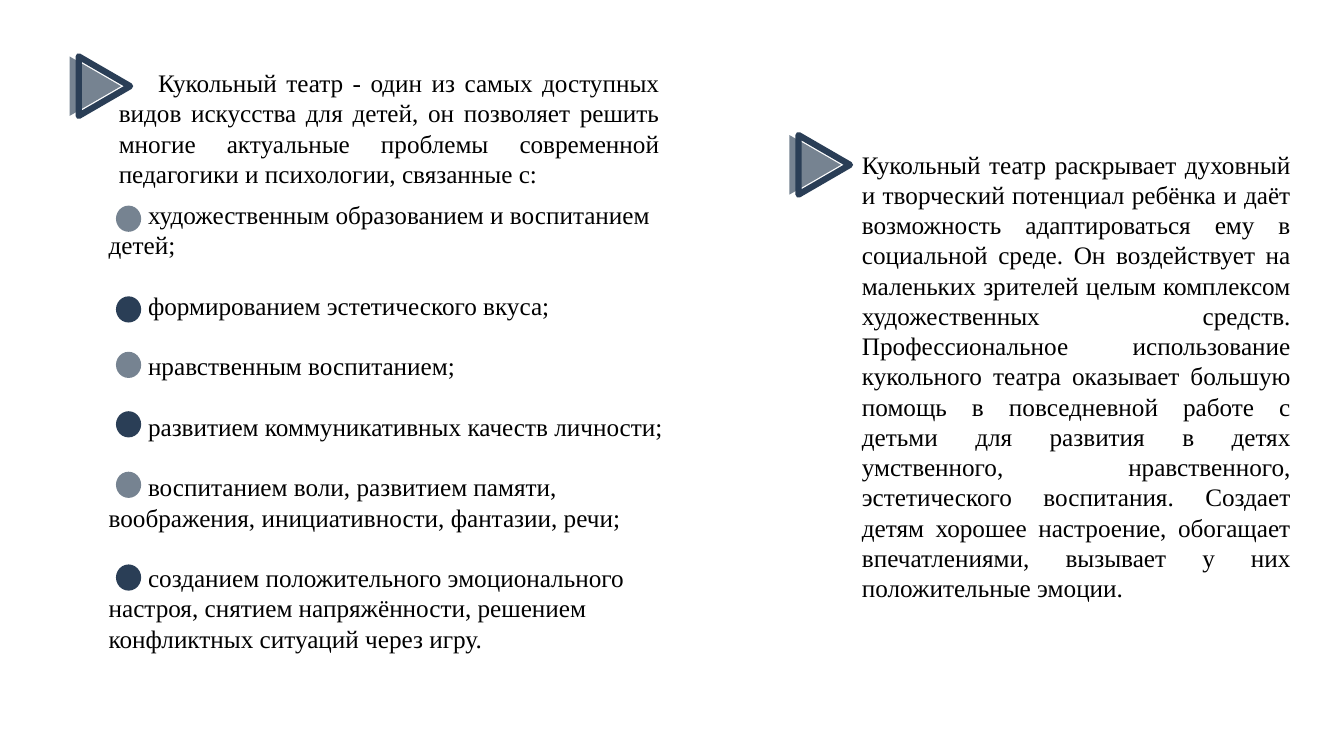
from pptx import Presentation
from pptx.dml.color import RGBColor
from pptx.enum.shapes import MSO_SHAPE
from pptx.enum.text import PP_ALIGN
from pptx.util import Inches, Pt

TRIANGLE = MSO_SHAPE.ISOSCELES_TRIANGLE
DOT = MSO_SHAPE.OVAL
JUSTIFY = PP_ALIGN.JUSTIFY
LEFT = PP_ALIGN.LEFT

COLORS = {"grey": "768391", "navy": "2A3E56", "text": "000000"}
FONT = "Times New Roman"
TEXT_SIZE = 18
BLANK_LINE = 21.6
FIRST_LINE = 0.39
MARKER_SIZE = (0.59, 0.51)
DOT_SIZE = (0.25, 0.26)

INTRO = (
    "Кукольный театр - один из самых доступных видов искусства для детей, "
    "он позволяет решить многие актуальные проблемы современной педагогики "
    "и психологии, связанные с:"
)
GOALS = [
    (0.11, "художественным образованием и воспитанием детей;"),
    (1.01, "формированием эстетического вкуса;"),
    (1.56, "нравственным воспитанием;"),
    (2.15, "развитием коммуникативных качеств личности;"),
    (2.75, "воспитанием воли, развитием памяти, воображения, "
           "инициативности, фантазии, речи;"),
    (3.67, "созданием положительного эмоционального настроя, снятием "
           "напряжённости, решением конфликтных ситуаций через игру."),
]
BENEFITS = (
    "Кукольный театр раскрывает духовный и творческий потенциал ребёнка "
    "и даёт возможность адаптироваться ему в социальной среде. "
    "Он воздействует на маленьких зрителей целым комплексом художественных "
    "средств. Профессиональное использование кукольного театра оказывает "
    "большую помощь в повседневной работе с детьми для развития в детях "
    "умственного, нравственного, эстетического воспитания. Создает детям "
    "хорошее настроение, обогащает впечатлениями, вызывает у них "
    "положительные эмоции."
)


def color(name):
    return RGBColor.from_string(COLORS[name])


def add_text(slide, box, paragraphs, align, indent=0):
    frame = slide.shapes.add_textbox(*map(Inches, box)).text_frame
    frame.word_wrap = True
    for index, wording in enumerate(paragraphs):
        paragraph = frame.add_paragraph() if index else frame.paragraphs[0]
        paragraph.alignment = align
        if index:
            paragraph.space_before = Pt(BLANK_LINE)
        if indent:
            properties = paragraph._p.get_or_add_pPr()
            properties.set("marL", "0")
            properties.set("indent", str(Inches(indent)))
        run = paragraph.add_run()
        run.text = wording
        run.font.name = FONT
        run.font.size = Pt(TEXT_SIZE)
        run.font.color.rgb = color("text")


def add_figure(slide, kind, left, top, size, fill=None, outline=None):
    figure = slide.shapes.add_shape(kind, *map(Inches, (left, top, *size)))
    figure.shadow.inherit = False
    if fill:
        figure.fill.solid()
        figure.fill.fore_color.rgb = color(fill)
    else:
        figure.fill.background()
    if outline:
        figure.line.color.rgb = color(outline)
        figure.line.width = Pt(4.5)
    else:
        figure.line.fill.background()
    return figure


def add_marker(slide, left, top):
    filled = add_figure(slide, TRIANGLE, left, top, MARKER_SIZE, fill="grey")
    framed = add_figure(slide, TRIANGLE, left + 0.09, top, MARKER_SIZE,
                        outline="navy")
    filled.rotation = framed.rotation = 90


def add_intro(slide, box):
    left, top = box[:2]
    add_text(slide, box, [INTRO], JUSTIFY, FIRST_LINE)
    add_marker(slide, left - 0.43, top - 0.02)


def add_goals(slide, box):
    left, top = box[:2]
    add_text(slide, box, [goal for _, goal in GOALS], LEFT, FIRST_LINE)
    for index, (drop, _) in enumerate(GOALS):
        add_figure(slide, DOT, left + 0.17, top + drop, DOT_SIZE,
                   fill="navy" if index % 2 else "grey")


def add_benefits(slide, box):
    left, top = box[:2]
    add_text(slide, box, [BENEFITS], JUSTIFY)
    add_marker(slide, left - 0.66, top - 0.05)


def main():
    deck = Presentation()
    deck.slide_width, deck.slide_height = Inches(13.33), Inches(7.5)
    slide = deck.slides.add_slide(deck.slide_layouts[6])
    add_intro(slide, (1.08, 0.62, 5.56, 1.31))
    add_goals(slide, (0.98, 1.93, 6.14, 4.64))
    add_benefits(slide, (8.45, 1.43, 4.45, 4.64))
    deck.save("out.pptx")


if __name__ == "__main__":
    main()
